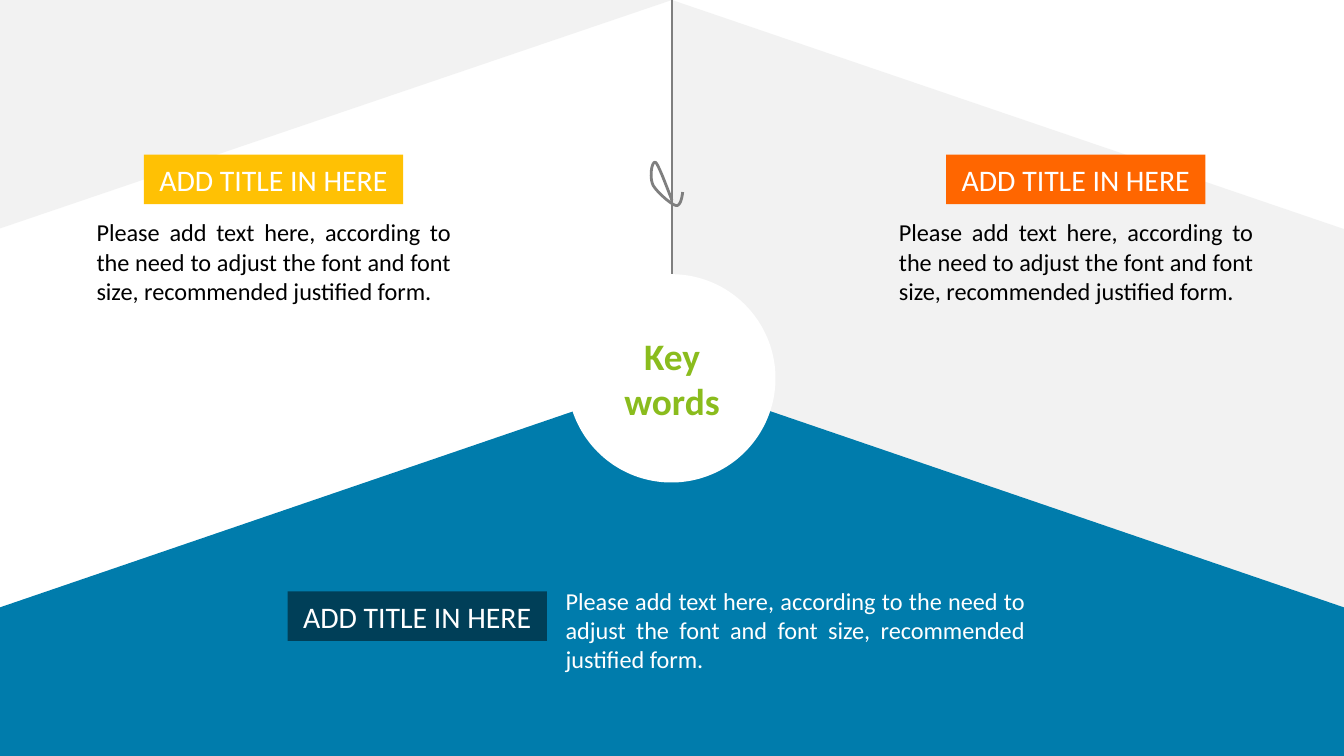
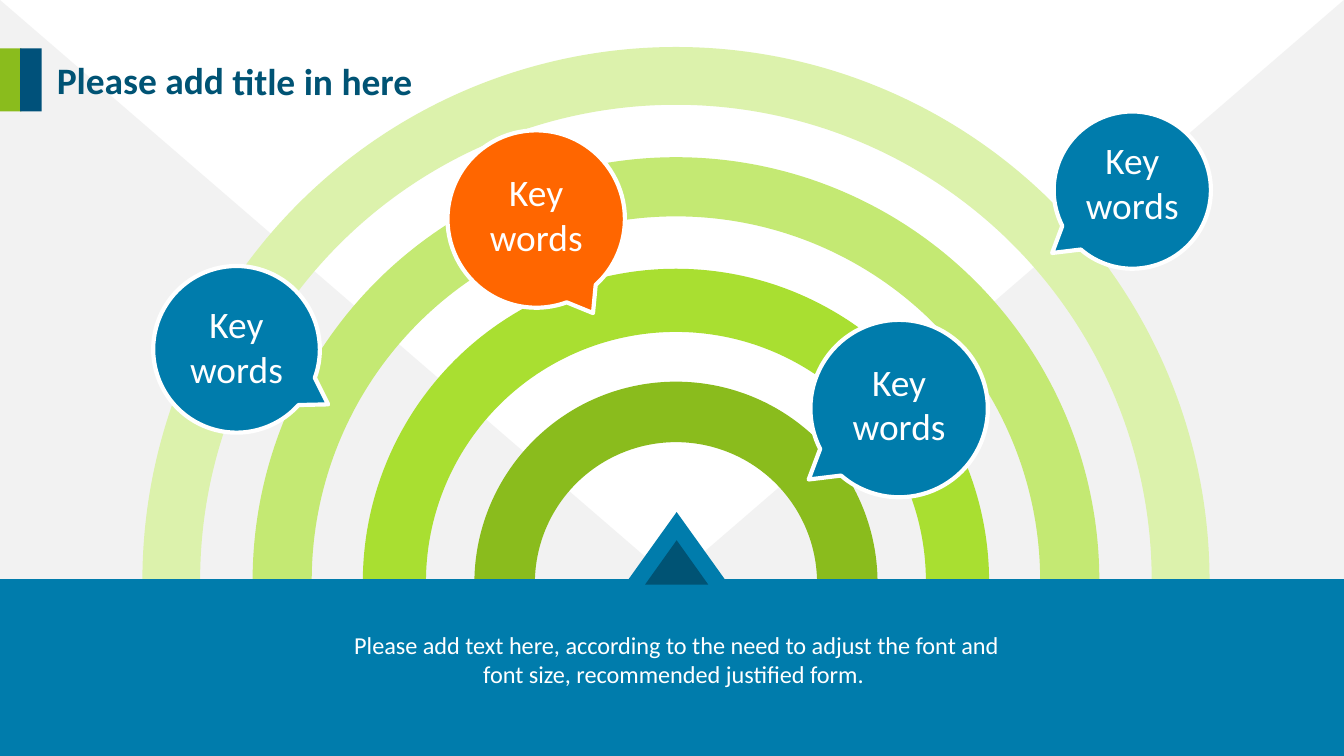
from dataclasses import dataclass
from typing import NamedTuple

from lxml.etree import SubElement
from pptx import Presentation
from pptx.dml.color import RGBColor
from pptx.enum.shapes import MSO_CONNECTOR, MSO_SHAPE as Shape
from pptx.enum.text import MSO_ANCHOR as Anchor, MSO_AUTO_SIZE as AutoSize, PP_ALIGN as Align
from pptx.oxml.ns import qn
from pptx.util import Inches, Pt


@dataclass(frozen=True)
class Theme:
    font: str = "Calibri"
    white: str = "FFFFFF"
    black: str = "000000"
    pale: str = "F2F2F2"
    gray: str = "7F7F7F"
    blue: str = "007CAC"
    navy: str = "005374"
    deep: str = "003F58"
    stripe: str = "00517A"
    yellow: str = "FFC104"
    orange: str = "FF6600"
    green: str = "8ABC1D"
    lime: str = "A9DF31"
    light_lime: str = "C4E973"
    mist: str = "DCF2AC"
    heading: int = 20
    label: int = 16
    body: int = 13
    string: float = 1.5
    outline: float = 2.25


T = Theme()
WIDTH = 10
HEIGHT = WIDTH * 9 / 16
LABEL = "ADD TITLE IN HERE"
BODY = ("Please add text here, according to the need to adjust the font and "
        "font size, recommended justified form. ")
KEY_WORDS = ["Key", "words"]


class Box(NamedTuple):
    x: float
    y: float
    w: float
    h: float

    def lengths(self) -> list:
        return [Inches(v) for v in self]


class Topic(NamedTuple):
    label: Box
    fill: str
    body: Box
    color: str


class Ring(NamedTuple):
    y: float
    size: float
    band: float
    color: str


class Bubble(NamedTuple):
    x: float
    y: float
    size: float
    words_y: float
    tail: tuple
    flip: bool
    color: str


TOPICS = [
    Topic(Box(2.14, 4.4, 1.93, 0.37), T.deep, Box(4.11, 4.31, 3.61, 0.76), T.white),
    Topic(Box(1.07, 1.15, 1.93, 0.37), T.yellow, Box(0.62, 1.57, 2.83, 0.98), T.black),
    Topic(Box(7.04, 1.15, 1.93, 0.37), T.orange, Box(6.59, 1.57, 2.83, 0.98), T.black),
]
RING_CENTER = 5.03
RINGS = [
    Ring(0.35, 7.94, 0.43, T.mist),
    Ring(1.17, 6.3, 0.44, T.light_lime),
    Ring(2, 4.66, 0.47, T.lime),
    Ring(2.84, 3, 0.45, T.green),
]
BUBBLES = [
    Bubble(6.03, 2.38, 1.32, 2.62, (-0.51, 0.4), False, T.blue),
    Bubble(7.84, 0.83, 1.17, 0.97, (-0.51, 0.4), False, T.blue),
    Bubble(1.14, 1.98, 1.24, 2.19, (-0.55, 0.33), True, T.blue),
    Bubble(3.33, 0.97, 1.32, 1.21, (-0.32, 0.53), True, T.orange),
]
KNOT = [
    ((5, 1.49), (4.95, 1.36), (4.9, 1.23), (4.88, 1.21)),
    ((4.88, 1.21), (4.85, 1.19), (4.83, 1.32), (4.86, 1.38)),
    ((4.86, 1.38), (4.89, 1.43), (4.99, 1.52), (5.03, 1.53)),
    ((5.03, 1.53), (5.07, 1.54), (5.08, 1.43), (5.08, 1.43)),
]


def rgb(color: str) -> RGBColor:
    return RGBColor.from_string(color)


def paint(sp, fill: str | None, line: str | None = None, width: float = 0) -> None:
    sp.shadow.inherit = False
    if fill:
        sp.fill.solid()
        sp.fill.fore_color.rgb = rgb(fill)
    else:
        sp.fill.background()
    if line:
        sp.line.color.rgb = rgb(line)
        sp.line.width = Pt(width)
    else:
        sp.line.fill.background()


def add_shape(s, kind: Shape, box: Box, fill: str, adj: tuple = (), flip: bool = False,
              rotation: float = 0, line: str | None = None, width: float = 0):
    sp = s.shapes.add_shape(kind, *box.lengths())
    paint(sp, fill, line, width)
    for i, value in enumerate(adj):
        sp.adjustments[i] = value
    if flip:
        sp.element.spPr.find(qn("a:xfrm")).set("flipH", "1")
    sp.rotation = rotation
    return sp


def add_freeform(s, points: list, fill: str | None, line: str | None = None,
                 width: float = 0, close: bool = True) -> None:
    corners = [(Inches(x), Inches(y)) for x, y in points]
    fb = s.shapes.build_freeform(*corners[0])
    fb.add_line_segments(corners[1:], close=close)
    paint(fb.convert_to_shape(), fill, line, width)


def curve(p0: tuple, p1: tuple, p2: tuple, p3: tuple, steps: int = 12) -> list:
    points = []
    for i in range(steps + 1):
        t = i / steps
        u = 1 - t
        points.append(tuple(u**3 * a + 3 * u * u * t * b + 3 * u * t * t * c + t**3 * d
                            for a, b, c, d in zip(p0, p1, p2, p3)))
    return points


def write(sp, lines: list, size: int, color: str, align: Align = Align.CENTER,
          bold: bool = False, wrap: bool = False, after: float = 0) -> None:
    tf = sp.text_frame
    tf.word_wrap = wrap
    tf.auto_size = AutoSize.NONE
    tf.text = "\n".join(lines)
    for p in tf.paragraphs:
        p.alignment = align
        p.space_before = Pt(0)
        p.space_after = Pt(after)
        p.font.name = T.font
        p.font.size = Pt(size)
        p.font.bold = bold
        p.font.color.rgb = rgb(color)


def add_body(s, box: Box, color: str, align: Align) -> None:
    sp = s.shapes.add_textbox(*box.lengths())
    write(sp, [BODY], T.body, color, align, wrap=True, after=6)


def place_title(s, box: Box, lines: list, color: str, rotation: float = 0) -> None:
    sp = s.shapes.title
    sp.left, sp.top, sp.width, sp.height = box.lengths()
    sp.rotation = rotation
    write(sp, lines, T.heading, color, bold=True)
    sp.text_frame.vertical_anchor = Anchor.TOP
    sp.element.getparent().append(sp.element)


def add_topic(s, topic: Topic) -> None:
    sp = add_shape(s, Shape.RECTANGLE, topic.label, topic.fill)
    write(sp, [LABEL], T.label, T.white)
    add_body(s, topic.body, topic.color, Align.JUSTIFY)


def add_ring(s, ring: Ring) -> None:
    box = Box(RING_CENTER - ring.size / 2, ring.y, ring.size, ring.size)
    sp = add_shape(s, Shape.BLOCK_ARC, box, ring.color)
    sp.adjustments[2] = ring.band / ring.size


def add_bubble(s, b: Bubble) -> None:
    add_shape(s, Shape.OVAL_CALLOUT, Box(b.x, b.y, b.size, b.size), b.color, b.tail,
              b.flip, line=T.white, width=T.outline)
    words = Box(b.x + b.size / 2 - 0.45, b.words_y, 0.9, 0.77)
    write(s.shapes.add_textbox(*words.lengths()), KEY_WORDS, T.heading, T.white)


def add_string(s) -> None:
    line = s.shapes.add_connector(MSO_CONNECTOR.STRAIGHT, Inches(5), Inches(-0.01),
                                  Inches(5), Inches(2.05))
    line.line.color.rgb = rgb(T.gray)
    line.line.width = Pt(T.string)
    SubElement(line.element.spPr, qn("a:effectLst"))
    knot = [point for segment in KNOT for point in curve(*segment)]
    add_freeform(s, knot, None, T.gray, T.string, close=False)


def build_hanging_slide(prs) -> None:
    s = prs.slides.add_slide(prs.slide_layouts[5])
    add_shape(s, Shape.PARALLELOGRAM, Box(5.24, -0.24, 4.52, 5), T.pale, (0.377,), rotation=270)
    add_freeform(s, [(0, 4.52), (5, 2.81), (WIDTH, 4.52), (WIDTH, HEIGHT), (0, HEIGHT)], T.blue)
    add_shape(s, Shape.RIGHT_TRIANGLE, Box(1.65, -1.65, 1.7, 5), T.pale, rotation=90)
    for topic in TOPICS:
        add_topic(s, topic)
    add_string(s)
    add_shape(s, Shape.OVAL, Box(4.22, 2.04, 1.55, 1.55), T.white)
    place_title(s, Box(4.54, 2.43, 0.92, 0.77), KEY_WORDS, T.green)


def build_rings_slide(prs) -> None:
    s = prs.slides.add_slide(prs.slide_layouts[5])
    for x, flip in ((4.97, True), (0, False)):
        add_shape(s, Shape.RIGHT_TRIANGLE, Box(x, 0, 5.03, 4.34), T.pale, flip=flip)
    for ring in RINGS:
        add_ring(s, ring)
    add_shape(s, Shape.RECTANGLE, Box(0, 4.31, WIDTH, HEIGHT - 4.31), T.blue)
    add_shape(s, Shape.ISOSCELES_TRIANGLE, Box(4.67, 3.81, 0.73, 0.51), T.blue)
    add_shape(s, Shape.ISOSCELES_TRIANGLE, Box(4.8, 4.02, 0.47, 0.33), T.navy)
    for x, color in ((0, T.green), (0.15, T.stripe)):
        add_shape(s, Shape.RECTANGLE, Box(x, 0.36, 0.16, 0.47), color)
    place_title(s, Box(0.31, 0.38, 2.87, 0.44), ["Please add title in here"], T.navy, 0.3)
    add_body(s, Box(2.37, 4.64, 5.32, 0.54), T.white, Align.CENTER)
    for bubble in BUBBLES:
        add_bubble(s, bubble)


def main() -> None:
    prs = Presentation()
    prs.slide_width, prs.slide_height = Inches(WIDTH), Inches(HEIGHT)
    build_hanging_slide(prs)
    build_rings_slide(prs)
    prs.save("out.pptx")


if __name__ == "__main__":
    main()
